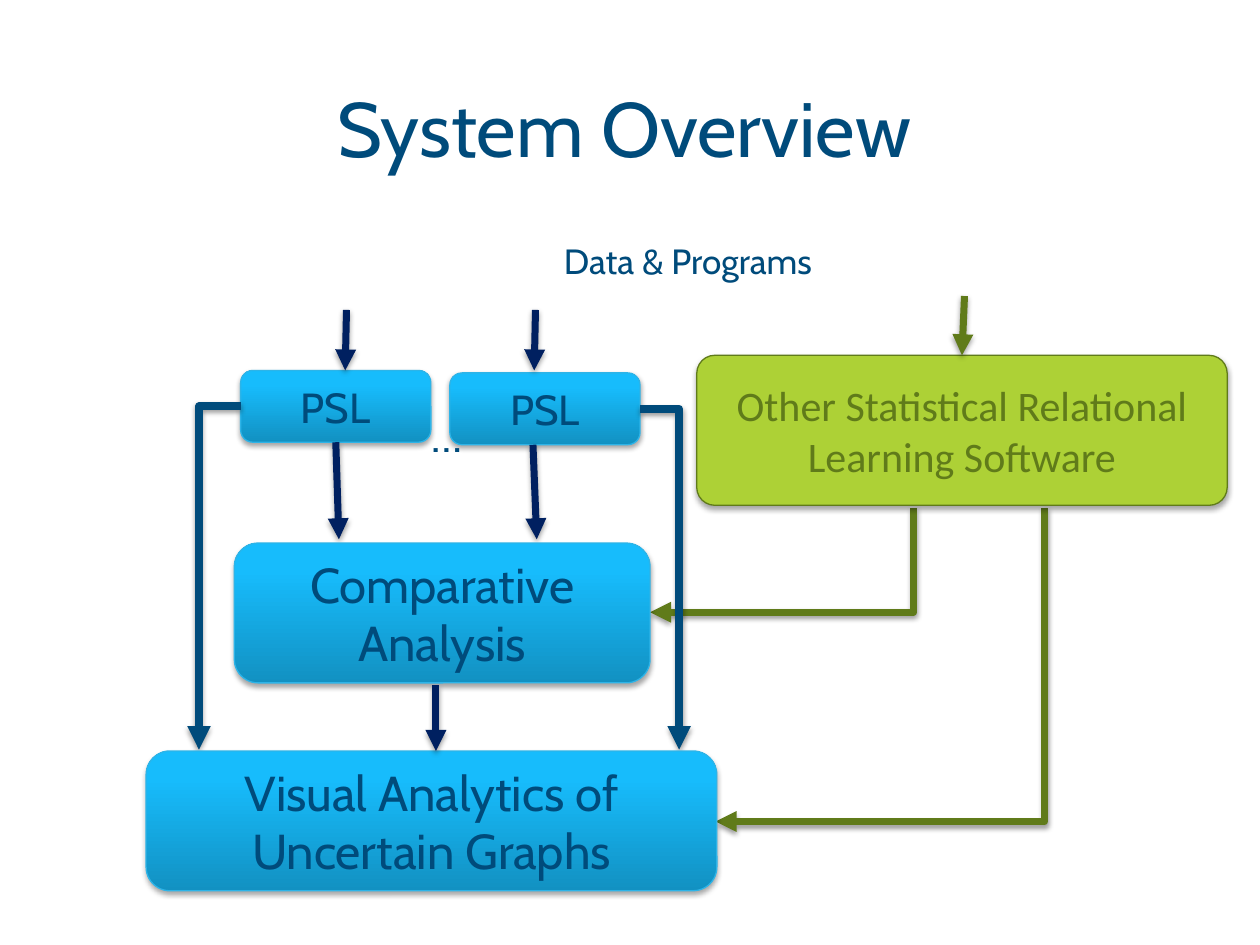
from pptx import Presentation
from pptx.dml.color import RGBColor
from pptx.enum.shapes import MSO_CONNECTOR, MSO_SHAPE
from pptx.enum.text import MSO_ANCHOR, PP_ALIGN
from pptx.oxml import parse_xml
from pptx.oxml.ns import nsdecls, qn
from pptx.util import Inches, Pt
from lxml.etree import SubElement

COLORS = {
    "text": "004B7B", "navy": "002060", "olive": "607B1A", "lime": "ADD136",
    "dark": "1291C2", "light": "17BCFC", "edge": "2DB4E8",
}


def color(name):
    return RGBColor.from_string(COLORS[name])


def write(shape, text, size=28, font="Cabin", ink="text",
          align=PP_ALIGN.CENTER, anchor=MSO_ANCHOR.MIDDLE):
    frame = shape.text_frame
    frame.word_wrap = True
    frame.vertical_anchor = anchor
    para = frame.paragraphs[0]
    para.alignment = align
    run = para.add_run()
    run.text = text
    run.font.size = Pt(size)
    run.font.name = font
    run.font.color.rgb = color(ink)


def shade(shape, alpha, dist):
    """Add a soft shadow below; call it after fill and line are set."""
    shape._element.spPr.append(parse_xml(
        f'<a:effectLst {nsdecls("a")}>'
        f'<a:outerShdw blurRad="{Pt(3.1)}" dist="{Pt(dist)}" dir="5400000" rotWithShape="0">'
        f'<a:srgbClr val="000000"><a:alpha val="{alpha * 1000}"/></a:srgbClr>'
        '</a:outerShdw></a:effectLst>'))


def add_label(slide, box, text, **style):
    label = slide.shapes.add_textbox(*map(Inches, box))
    write(label, text, anchor=MSO_ANCHOR.TOP, **style)


def add_box(slide, box, text, fill=None, edge="edge", round=0.17, **style):
    """Add a rounded box, with the blue gradient unless a fill is named."""
    shape = slide.shapes.add_shape(MSO_SHAPE.ROUNDED_RECTANGLE, *map(Inches, box))
    shape.adjustments[0] = round
    if fill:
        shape.fill.solid()
        shape.fill.fore_color.rgb = color(fill)
    else:
        shape.fill.gradient()
        shape.fill.gradient_angle = 90
        for stop, name, place in zip(shape.fill.gradient_stops, ("dark", "light"), (0, 0.8)):
            stop.color.rgb = color(name)
            stop.position = place
    shape.line.color.rgb = color(edge)
    shape.line.width = Pt(0.75)
    shade(shape, 35, 1.8)
    write(shape, text, **style)
    return shape


def add_arrow(slide, start, end, ink="navy", width=4, bent=False, tip="tailEnd"):
    """Add an arrow; a bent one runs across first, then up or down."""
    kind = MSO_CONNECTOR.ELBOW if bent else MSO_CONNECTOR.STRAIGHT
    arrow = slide.shapes.add_connector(kind, *map(Inches, (*start, *end)))
    if bent:
        arrow._element.spPr.find(qn("a:prstGeom")).set("prst", "bentConnector2")
    arrow.line.color.rgb = color(ink)
    arrow.line.width = Pt(width)
    SubElement(arrow.line._get_or_add_ln(), qn("a:" + tip), type="triangle")
    shade(arrow, 38, 1.6)
    return arrow


def add_title(slide, box):
    title = slide.shapes.title
    title.left, title.top, title.width, title.height = map(Inches, box)
    write(title, "System Overview", size=44)


def add_other(slide, box):
    """Add the green software box, its input and its two output routes."""
    left, top, width, height = box
    base = top + height + 0.02
    for target, turn in (((5.68, 6.52), 8.29), ((5.16, 4.86), 7.25)):
        add_arrow(slide, target, (turn, base), ink="olive", bent=True, tip="headEnd")
    shape = add_box(slide, box, "Other Statistical Relational Learning Software",
                    fill="lime", edge="olive", round=0.12,
                    size=24, font="Calibri", ink="olive")
    feed = add_arrow(slide, (left + width / 2 + 0.02, top - 0.47),
                     (left + width / 2, top), ink="olive")
    feed.end_connect(shape, 0)


def add_psl(slide, box, feed, out, turn):
    """Add a PSL box with its input, its output and a side route."""
    left, top, width, height = box
    shape = add_box(slide, box, "PSL", size=24)
    side = left if turn < left else left + width
    add_arrow(slide, (side, top + height / 2), (turn, 5.95),
              ink="text", width=4.5, bent=True)
    add_arrow(slide, (feed + 0.01, 2.46), (feed, 2.94))
    down = add_arrow(slide, (out, top + height), (out + 0.03, 4.28))
    if abs(out - left - width / 2) < 0.02:
        down.begin_connect(shape, 2)


def add_analysis(slide, upper, lower):
    add_box(slide, upper, "Comparative Analysis")
    add_box(slide, lower, "Visual Analytics of Uncertain Graphs")
    add_arrow(slide, (3.46, upper[1] + upper[3] + 0.02), (3.46, lower[1]))


def main():
    deck = Presentation()
    deck.slide_width, deck.slide_height = Inches(10), Inches(7.5)
    slide = deck.slides.add_slide(deck.slide_layouts[5])
    add_title(slide, (0.62, 0.62, 8.67, 0.77))
    add_label(slide, (4.15, 1.85, 2.62, 0.44), "Data & Programs", size=20)
    add_other(slide, (5.53, 2.82, 4.21, 1.19))
    add_psl(slide, (1.91, 2.94, 1.51, 0.57), feed=2.74, out=2.66, turn=1.58)
    add_psl(slide, (3.57, 2.96, 1.51, 0.57), feed=4.24, out=4.23, turn=5.39)
    add_analysis(slide, (1.86, 4.31, 3.3, 1.11), (1.16, 5.96, 4.53, 1.11))
    add_label(slide, (3.33, 3.18, 0.47, 0.54), "…", size=26, align=PP_ALIGN.LEFT)
    deck.save("out.pptx")


if __name__ == "__main__":
    main()
